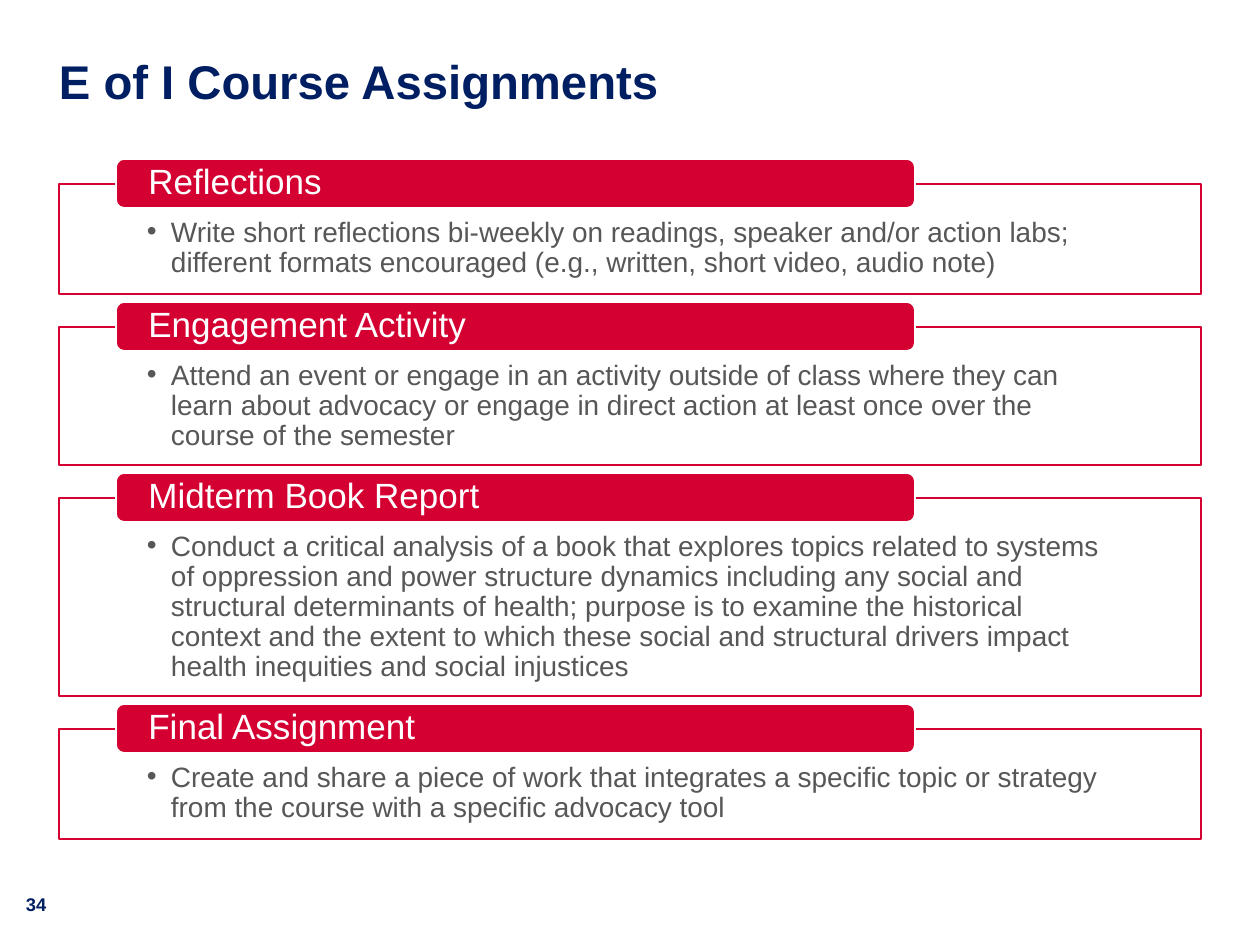
"""Builds a slide listing four course assignments in tabbed boxes."""
from lxml import etree
from pptx import Presentation
from pptx import util as u
from pptx.dml.color import RGBColor
from pptx.enum import shapes, text
from pptx.oxml.ns import qn

PX_PER_INCH = 126
NAVY, RED, GRAY, WHITE = "001E62", "D40032", "575757", "FFFFFF"
BOX_LEFT, BOX_WIDTH, BOX_TOP, BOX_GAP = 59, 1142, 184, 33
TAB_LEFT, TAB_WIDTH, TAB_HEIGHT, TAB_RISE = 116, 799, 49, 25
ASSIGNMENTS = [
    ("Reflections", 110,
     "Write short reflections bi-weekly on readings, speaker and/or action labs; "
     "different formats encouraged (e.g., written, short video, audio note)"),
    ("Engagement Activity", 138,
     "Attend an event or engage in an activity outside of class where they can learn "
     "about advocacy or engage in direct action at least once over the course of the semester"),
    ("Midterm Book Report", 198,
     "Conduct a critical analysis of a book that explores topics related to systems of "
     "oppression and power structure dynamics including any social and structural "
     "determinants of health; purpose is to examine the historical context and the extent "
     "to which these social and structural drivers impact health inequities and social injustices"),
    ("Final Assignment", 110,
     "Create and share a piece of work that integrates a specific topic or strategy "
     "from the course with a specific advocacy tool"),
]


def px(length):
    """Turn pixels into EMU."""
    return u.Emu(round(length * 914400 / PX_PER_INCH))


def color(value):
    """Turn a hex string into a colour."""
    return RGBColor.from_string(value)


def set_all(target, values):
    """Set every attribute in a dict of format values."""
    for name, value in values.items():
        setattr(target, name, value)


def write(shape, words, size, fill, margins, anchor=text.MSO_ANCHOR.TOP, bold=False, bullet=False):
    """Put one formatted paragraph in a shape."""
    frame = shape.text_frame
    set_all(frame, {"word_wrap": True, "auto_size": text.MSO_AUTO_SIZE.NONE,
                    "vertical_anchor": anchor})
    sides = ("margin_left", "margin_top", "margin_right", "margin_bottom")
    set_all(frame, dict(zip(sides, map(px, margins))))
    paragraph = frame.paragraphs[0]
    paragraph.text = words
    set_all(paragraph, {"alignment": text.PP_ALIGN.LEFT, "line_spacing": 0.9})
    if bullet:
        add_bullet(paragraph)
    font = paragraph.runs[0].font
    set_all(font, {"name": "Arial", "size": u.Pt(size), "bold": bold})
    font.color.rgb = color(fill)


def add_bullet(paragraph):
    """Give a paragraph a round bullet and a hanging indent."""
    paragraph.level = 1
    properties = paragraph._p.get_or_add_pPr()
    properties.set("marL", str(px(24)))
    properties.set("indent", str(px(-24)))
    etree.SubElement(properties, qn("a:buFont")).set("typeface", "Arial")
    etree.SubElement(properties, qn("a:buChar")).set("char", "•")


def add_panel(slide, kind, place, fill, line):
    """Add a filled and outlined shape."""
    shape = slide.shapes.add_shape(kind, *map(px, place))
    shape.shadow.inherit = False
    shape.fill.solid()
    shape.fill.fore_color.rgb = color(fill)
    shape.line.color.rgb = color(line)
    shape.line.width = u.Pt(1)
    return shape


def add_assignment(slide, top, height, heading, description):
    """Add an outlined description with its heading tab."""
    box = add_panel(slide, shapes.MSO_SHAPE.RECTANGLE,
                    (BOX_LEFT, top, BOX_WIDTH, height), WHITE, RED)
    fill_color = box._element.spPr.find(qn("a:solidFill"))[0]
    etree.SubElement(fill_color, qn("a:alpha")).set("val", "90000")
    write(box, description, 16, GRAY, (88, 34, 88, 15), bullet=True)
    tab = add_panel(slide, shapes.MSO_SHAPE.ROUNDED_RECTANGLE,
                    (TAB_LEFT, top - TAB_RISE, TAB_WIDTH, TAB_HEIGHT), RED, WHITE)
    write(tab, heading, 20, WHITE, (30, 0, 30, 0), text.MSO_ANCHOR.MIDDLE)


def add_title(slide, words):
    """Place and fill the title placeholder."""
    title = slide.shapes.title
    set_all(title, {"left": px(59), "top": px(59), "width": px(1142), "height": px(112)})
    write(title, words, 27, NAVY, (0, 0, 0, 0), bold=True)


def add_page_number(slide, number):
    """Add the page number at the bottom left."""
    box = slide.shapes.add_textbox(px(13), px(887), px(62), px(35))
    write(box, number, 10.5, NAVY, (13, 6, 13, 6), bold=True)
    box.text_frame.paragraphs[0].line_spacing = 1.0


def main():
    """Build and save the slide."""
    presentation = Presentation()
    set_all(presentation, {"slide_width": u.Inches(10), "slide_height": u.Inches(7.5)})
    slide = presentation.slides.add_slide(presentation.slide_layouts[5])
    add_page_number(slide, "34")
    add_title(slide, "E of I Course Assignments")
    top = BOX_TOP
    for heading, height, description in ASSIGNMENTS:
        add_assignment(slide, top, height, heading, description)
        top += height + BOX_GAP
    presentation.save("out.pptx")


if __name__ == "__main__":
    main()
